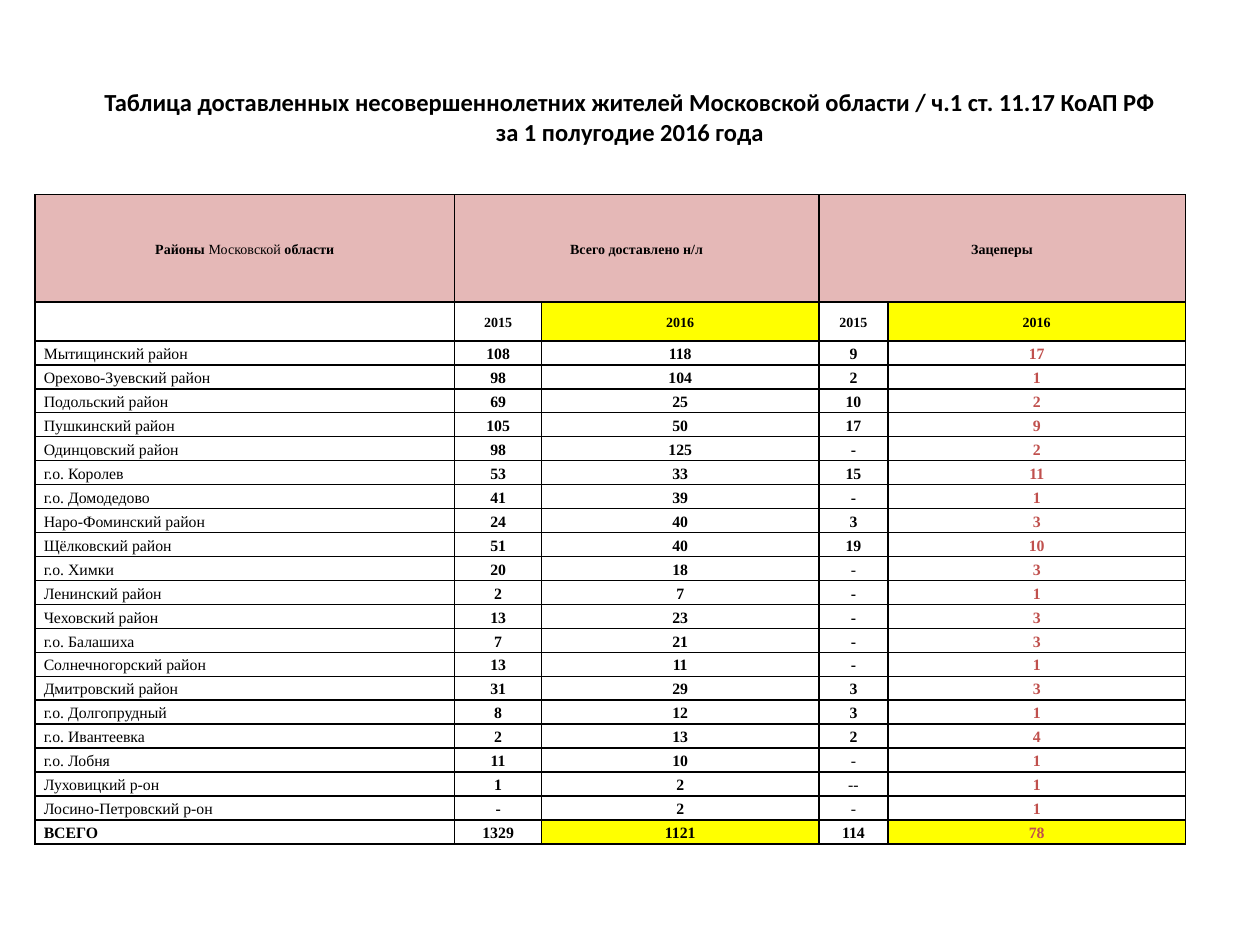
from lxml.etree import SubElement
from pptx import Presentation
from pptx.dml.color import RGBColor
from pptx.enum.text import MSO_ANCHOR as Anchor, PP_ALIGN as Align
from pptx.oxml.ns import qn
from pptx.util import Pt

COLORS = {"ink": "000000", "accent": "C0504D", "header": "E5B8B7",
          "current": "FFFF00", "total": "FFFFFF"}
TITLE = ("Таблица доставленных несовершеннолетних жителей Московской области"
         " / ч.1 ст. 11.17 КоАП РФ\nза 1 полугодие 2016 года")
GROUPS = {0: ["Районы ", "Московской", " области"],
          1: ["Всего доставлено н/л"], 3: ["Зацеперы"]}
YEARS = ["", "2015", "2016", "2015", "2016"]
DISTRICTS = [
    ("Мытищинский район", "108", "118", "9", "17"),
    ("Орехово-Зуевский район", "98", "104", "2", "1"),
    ("Подольский район", "69", "25", "10", "2"),
    ("Пушкинский район", "105", "50", "17", "9"),
    ("Одинцовский район", "98", "125", "-", "2"),
    ("г.о. Королев", "53", "33", "15", "11"),
    ("г.о. Домодедово", "41", "39", "-", "1"),
    ("Наро-Фоминский район", "24", "40", "3", "3"),
    ("Щёлковский район", "51", "40", "19", "10"),
    ("г.о. Химки", "20", "18", "-", "3"),
    ("Ленинский район", "2", "7", "-", "1"),
    ("Чеховский район", "13", "23", "-", "3"),
    ("г.о. Балашиха", "7", "21", "-", "3"),
    ("Солнечногорский район", "13", "11", "-", "1"),
    ("Дмитровский район", "31", "29", "3", "3"),
    ("г.о. Долгопрудный", "8", "12", "3", "1"),
    ("г.о. Ивантеевка", "2", "13", "2", "4"),
    ("г.о. Лобня", "11", "10", "-", "1"),
    ("Луховицкий р-он", "1", "2", "--", "1"),
    ("Лосино-Петровский р-он", "-", "2", "-", "1"),
]
TOTAL = ("ВСЕГО", "1329", "1121", "114", "78")
LIGHT_DASHES = {"г.о. Химки", "г.о. Лобня", "Луховицкий р-он", "Лосино-Петровский р-он"}
COLUMN_WIDTHS = [239.8, 49.7, 158.4, 39.6, 169.9]
HEADER_HEIGHT, YEAR_HEIGHT, ROW_HEIGHT = 61.2, 22.3, 13.7


def style_para(para, size, font, bold=True, color="ink", align=Align.CENTER):
    """Set the alignment and font of a paragraph."""
    para.alignment = align
    para.font.name, para.font.size, para.font.bold = font, Pt(size), bold
    para.font.color.rgb = RGBColor.from_string(COLORS[color])


def add_title(page, left, top, width, height):
    """Place the centred heading."""
    box = page.shapes.add_textbox(Pt(left), Pt(top), Pt(width), Pt(height))
    frame = box.text_frame
    frame.word_wrap, frame.vertical_anchor = True, Anchor.MIDDLE
    frame.paragraphs[0].text = TITLE
    style_para(frame.paragraphs[0], 14, "Calibri")


def add_borders(cell):
    """Draw a thin line on all four sides of a cell."""
    props = cell._tc.get_or_add_tcPr()
    for index, side in enumerate("LRTB"):
        line = SubElement(props, qn(f"a:ln{side}"), w=str(Pt(1)))
        fill = SubElement(line, qn("a:solidFill"))
        SubElement(fill, qn("a:srgbClr"), val=COLORS["ink"])
        props.insert(index, line)


def fill_cell(cell, text, size=9, fill=None, **style):
    """Write one cell with its fill and borders."""
    cell.vertical_anchor = Anchor.MIDDLE
    cell.margin_left = cell.margin_right = Pt(5)
    cell.margin_top = cell.margin_bottom = 0
    if fill:
        cell.fill.solid()
        cell.fill.fore_color.rgb = RGBColor.from_string(COLORS[fill])
    else:
        cell.fill.background()
    add_borders(cell)
    para = cell.text_frame.paragraphs[0]
    para.line_spacing = 1.15
    style_para(para, size, "Times New Roman", **style)
    for index, part in enumerate([text] if isinstance(text, str) else text):
        if part:
            span = para.add_run()
            span.text = part
            if index == 1:
                span.font.bold = False


def fill_row(table, row, values, total=False):
    """Write the name and figures of one district or of the total."""
    for column, value in enumerate(values):
        is_name = column == 0
        light_dash = column == 3 and values[0] in LIGHT_DASHES
        fill = None
        if total and not is_name:
            fill = "current" if column in (2, 4) else "total"
        fill_cell(table.cell(row, column), value, fill=fill,
                  bold=total or not (is_name or light_dash),
                  color="accent" if column == 4 else "ink",
                  align=Align.LEFT if is_name else Align.CENTER)


def add_district_table(page, left, top):
    """Place the table of districts with its two header rows."""
    heights = [HEADER_HEIGHT, YEAR_HEIGHT] + [ROW_HEIGHT] * (len(DISTRICTS) + 1)
    table = page.shapes.add_table(
        len(heights), len(COLUMN_WIDTHS), Pt(left), Pt(top),
        Pt(sum(COLUMN_WIDTHS)), Pt(sum(heights))).table
    table.first_row = table.horz_banding = False
    for column, width in zip(table.columns, COLUMN_WIDTHS):
        column.width = Pt(width)
    for row, height in zip(table.rows, heights):
        row.height = Pt(height)
    for column in (1, 3):
        table.cell(0, column).merge(table.cell(0, column + 1))
    for column, year in enumerate(YEARS):
        fill_cell(table.cell(0, column), GROUPS.get(column, ""), 8, "header")
        fill_cell(table.cell(1, column), year, 8, "current" if year == "2016" else None)
    for row, values in enumerate(DISTRICTS, 2):
        fill_row(table, row, values)
    fill_row(table, len(heights) - 1, TOTAL, total=True)


def main():
    """Build the deck and save it."""
    deck = Presentation()
    deck.slide_width, deck.slide_height = Pt(720), Pt(540)
    page = deck.slides.add_slide(deck.slide_layouts[6])
    add_title(page, 36, 21.6, 648, 90)
    add_district_table(page, 20, 111.3)
    deck.save("out.pptx")


if __name__ == "__main__":
    main()
